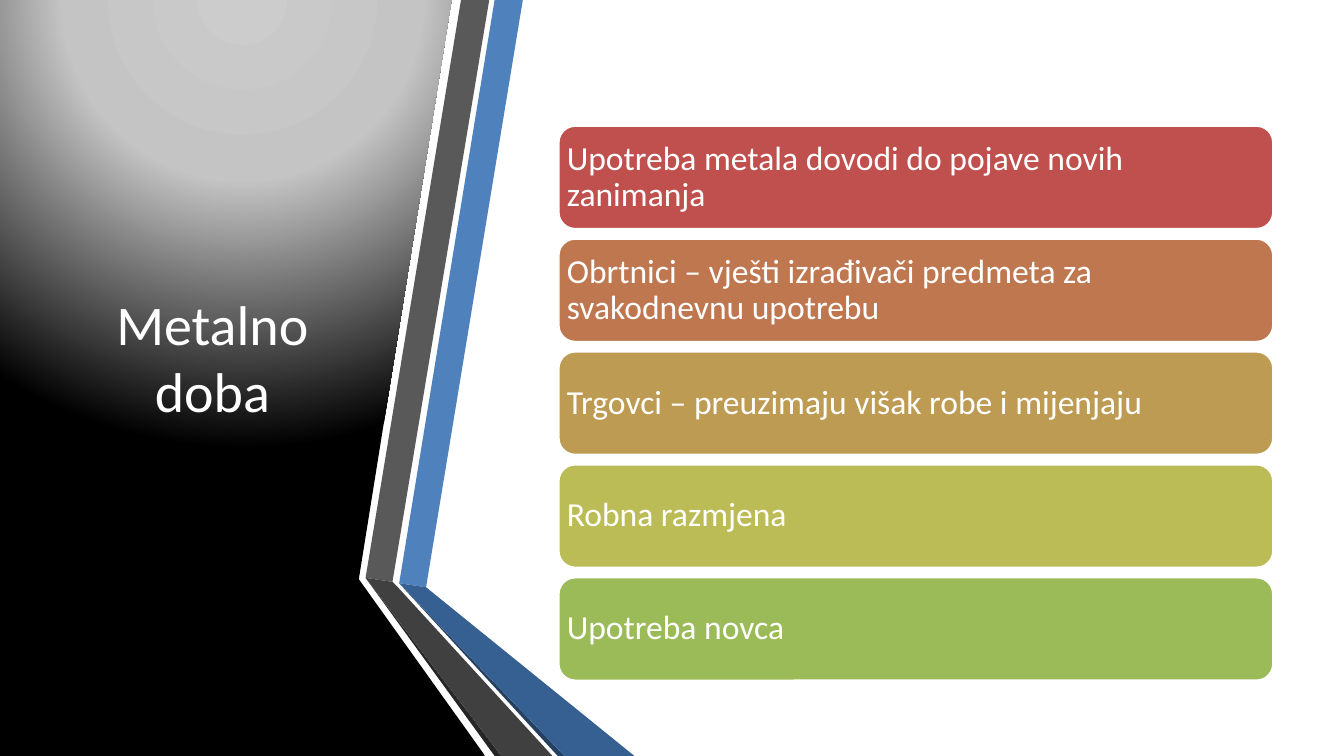
"""Build the Metal Age slide with a ribbon panel and five coloured bars."""
import dataclasses

import pptx
import pptx.dml.color
import pptx.enum.shapes
import pptx.enum.text
import pptx.oxml
import pptx.oxml.ns
import pptx.util

Inches = pptx.util.Inches
Pt = pptx.util.Pt

FONT = "Calibri"
WHITE = "FFFFFF"
SLIDE_WIDTH = 10
SLIDE_HEIGHT = SLIDE_WIDTH * 9 / 16
BAR_LEFT, BAR_TOP, BAR_WIDTH, BAR_HEIGHT = 4.15, 0.93, 5.33, 0.78
BAR_PITCH = 0.84
BAR_MARGIN = 0.03


@dataclasses.dataclass
class Outline:
    points: list[tuple[float, float]]
    color: str


@dataclasses.dataclass
class Bar:
    text: str
    color: str


PANEL = Outline(
    [(2.64, 0), (3.36, 0), (2.67, 4.31), (3.61, SLIDE_HEIGHT), (0, SLIDE_HEIGHT), (0, 0)],
    "000000",
)
RIBBONS = [
    Outline([(2.97, 4.34), (3.17, 4.37), (3.89, 0), (3.68, 0)], "4F81BD"),
    Outline([(3.64, 0), (3.43, 0), (2.72, 4.3), (2.92, 4.33)], "595959"),
    Outline([(2.72, 4.3), (3.68, SLIDE_HEIGHT), (3.73, SLIDE_HEIGHT)], "262626"),
    Outline([(2.97, 4.34), (4.15, SLIDE_HEIGHT), (4.2, SLIDE_HEIGHT)], "254061"),
    Outline(
        [(2.97, 4.34), (4.2, SLIDE_HEIGHT), (4.72, SLIDE_HEIGHT), (3.17, 4.37)], "376092"
    ),
    Outline(
        [(4.11, SLIDE_HEIGHT), (2.96, 4.37), (2.92, 4.33), (2.72, 4.3), (3.73, SLIDE_HEIGHT)],
        "404040",
    ),
]
BARS = [
    Bar("Upotreba metala dovodi do pojave novih zanimanja", "C0504D"),
    Bar("Obrtnici – vješti izrađivači predmeta za svakodnevnu upotrebu", "BF7750"),
    Bar("Trgovci – preuzimaju višak robe i mijenjaju", "BD9B53"),
    Bar("Robna razmjena", "BCBC56"),
    Bar("Upotreba novca", "9BBB59"),
]
PANEL_STOPS = [(0, "CCCCCC"), (40, "C4C4C4"), (100, "000000")]


def rgb(color: str) -> pptx.dml.color.RGBColor:
    return pptx.dml.color.RGBColor.from_string(color)


def fill_solid(shape, color: str) -> None:
    shape.shadow.inherit = False
    shape.fill.solid()
    shape.fill.fore_color.rgb = rgb(color)


def draw_outline(slide, outline: Outline):
    first, *others = [(Inches(x), Inches(y)) for x, y in outline.points]
    builder = slide.shapes.build_freeform(*first, scale=1.0)
    builder.add_line_segments(others, close=True)
    shape = builder.convert_to_shape()
    fill_solid(shape, outline.color)
    shape.line.fill.background()
    return shape


def fill_radial(shape, stops: list[tuple[int, str]]) -> None:
    stop_xml = "".join(
        f'<a:gs pos="{position * 1000}"><a:srgbClr val="{color}"/></a:gs>'
        for position, color in stops
    )
    gradient = pptx.oxml.parse_xml(
        f'<a:gradFill {pptx.oxml.ns.nsdecls("a")} rotWithShape="1">'
        f"<a:gsLst>{stop_xml}</a:gsLst>"
        '<a:path path="circle">'
        '<a:fillToRect l="50000" t="-80000" r="50000" b="180000"/>'
        "</a:path></a:gradFill>"
    )
    properties = shape.element.spPr
    properties.replace(properties.find(pptx.oxml.ns.qn("a:solidFill")), gradient)


def write_text(shape, text: str, size: float, alignment):
    frame = shape.text_frame
    frame.word_wrap = True
    frame.auto_size = pptx.enum.text.MSO_AUTO_SIZE.NONE
    frame.vertical_anchor = pptx.enum.text.MSO_ANCHOR.MIDDLE
    paragraph = frame.paragraphs[0]
    paragraph.alignment = alignment
    run = paragraph.add_run()
    run.text = text
    run.font.name = FONT
    run.font.size = Pt(size)
    run.font.color.rgb = rgb(WHITE)
    return paragraph


def place_title(slide, text: str) -> None:
    title = slide.shapes.title
    title.left, title.top = Inches(0.44), Inches(0.56)
    title.width, title.height = Inches(2.28), Inches(4.19)
    write_text(title, text, 30, pptx.enum.text.PP_ALIGN.CENTER)
    title.element.getparent().append(title.element)


def draw_bar(slide, bar: Bar, top: float) -> None:
    shape = slide.shapes.add_shape(
        pptx.enum.shapes.MSO_SHAPE.ROUNDED_RECTANGLE,
        Inches(BAR_LEFT), Inches(top), Inches(BAR_WIDTH), Inches(BAR_HEIGHT),
    )
    fill_solid(shape, bar.color)
    shape.line.color.rgb = rgb(WHITE)
    shape.line.width = Pt(2)
    frame = shape.text_frame
    frame.margin_left = frame.margin_right = Inches(BAR_MARGIN)
    frame.margin_top = frame.margin_bottom = Inches(BAR_MARGIN)
    paragraph = write_text(shape, bar.text, 18, pptx.enum.text.PP_ALIGN.LEFT)
    paragraph.line_spacing = 0.9
    paragraph.space_after = Pt(6.3)


def main() -> None:
    presentation = pptx.Presentation()
    presentation.slide_width = Inches(SLIDE_WIDTH)
    presentation.slide_height = Inches(SLIDE_HEIGHT)
    slide = presentation.slides.add_slide(presentation.slide_layouts[5])
    fill_radial(draw_outline(slide, PANEL), PANEL_STOPS)
    for ribbon in RIBBONS:
        draw_outline(slide, ribbon)
    place_title(slide, "Metalno doba")
    for index, bar in enumerate(BARS):
        draw_bar(slide, bar, BAR_TOP + index * BAR_PITCH)
    presentation.save("out.pptx")


if __name__ == "__main__":
    main()
